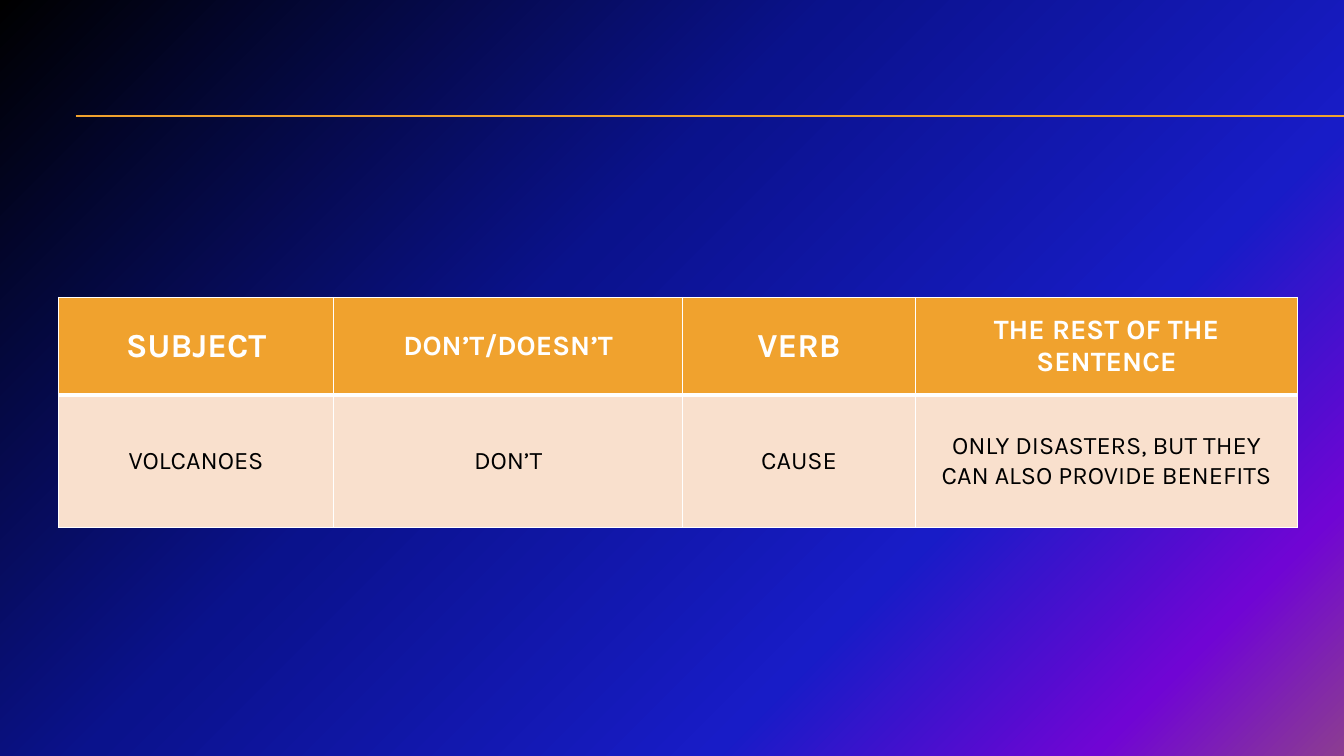
from lxml.etree import SubElement
from pptx import Presentation
from pptx.dml.color import RGBColor
from pptx.enum.shapes import MSO_CONNECTOR as Connector
from pptx.enum.text import MSO_ANCHOR as Anchor, PP_ALIGN as Align
from pptx.oxml.ns import qn
from pptx.util import Inches, Pt

ORANGE, CREAM, WHITE, BLACK = "F0A22E", "F9E0CD", "FFFFFF", "000000"
GRADIENT = [(0, BLACK), (40, "0A128C"), (70, "181CC7"), (88, "7005D4"), (100, "8C3D91")]
COLUMN_WIDTHS = [2.73, 3.46, 2.31, 3.79]
ROW_HEIGHTS = [0.97, 1.31]
HEADER = [("SUBJECT", 24), ("DON’T/DOESN’T", 20), ("VERB", 24),
          ("THE REST OF THE SENTENCE", 20)]
EXAMPLE = [(text, 18) for text in (
    "VOLCANOES", "DON’T", "CAUSE", "ONLY DISASTERS, BUT THEY CAN ALSO PROVIDE BENEFITS")]


def color(value):
    return RGBColor.from_string(value)


def paint_background(page):
    fill = page.background.fill
    fill.gradient()
    fill.gradient_angle = 315  # python-pptx counts counter-clockwise
    stops = next(page.element.iter(qn("a:gsLst")))
    for stop in list(stops):
        stops.remove(stop)
    for percent, value in GRADIENT:
        stop = SubElement(stops, qn("a:gs"), pos=str(percent * 1000))
        SubElement(stop, qn("a:srgbClr"), val=value)


def add_rules(page, left, top, right, gap=0.01):
    for y in (top, top + gap):
        rule = page.shapes.add_connector(
            Connector.STRAIGHT, Inches(left), Inches(y), Inches(right), Inches(y))
        rule.line.color.rgb = color(ORANGE)
        rule.line.width = Pt(0.75)
        SubElement(rule.element.spPr, qn("a:effectLst"))


def set_borders(cell, widths):
    properties = cell._tc.get_or_add_tcPr()
    for side, width in widths.items():
        line = SubElement(properties, qn(f"a:ln{side}"), w=str(Pt(width)))
        fill = SubElement(line, qn("a:solidFill"))
        SubElement(fill, qn("a:srgbClr"), val=WHITE)


def format_cell(cell, text, size, is_header, borders):
    set_borders(cell, borders)  # borders precede the fill in the XML
    cell.fill.solid()
    cell.fill.fore_color.rgb = color(ORANGE if is_header else CREAM)
    cell.vertical_anchor = Anchor.MIDDLE
    cell.margin_left = cell.margin_right = Inches(0.13)
    cell.margin_top = cell.margin_bottom = Inches(0.05)
    cell.text = text
    para = cell.text_frame.paragraphs[0]
    para.alignment = Align.CENTER
    para.font.name = "Karla"
    para.font.size = Pt(size)
    para.font.bold = is_header
    para.font.color.rgb = color(WHITE if is_header else BLACK)


def add_sentence_table(page, left, top):
    rows = [HEADER, EXAMPLE]
    frame = page.shapes.add_table(
        len(rows), len(COLUMN_WIDTHS), Inches(left), Inches(top),
        Inches(sum(COLUMN_WIDTHS)), Inches(sum(ROW_HEIGHTS)))
    table = frame.table
    for column, width in zip(table.columns, COLUMN_WIDTHS):
        column.width = Inches(width)
    for row, height in zip(table.rows, ROW_HEIGHTS):
        row.height = Inches(height)
    for r, entries in enumerate(rows):
        is_header = r == 0
        # A heavier line separates the header from the example
        borders = {"L": 1, "R": 1, "T": 1 if is_header else 3, "B": 3 if is_header else 1}
        for c, (text, size) in enumerate(entries):
            format_cell(table.cell(r, c), text, size, is_header, borders)


def main():
    deck = Presentation()
    deck.slide_width, deck.slide_height = Inches(13.33), Inches(7.5)
    page = deck.slides.add_slide(deck.slide_layouts[6])
    paint_background(page)
    add_rules(page, left=0.75, top=1.15, right=13.33)
    add_sentence_table(page, left=0.58, top=2.95)
    deck.save("out.pptx")


if __name__ == "__main__":
    main()
